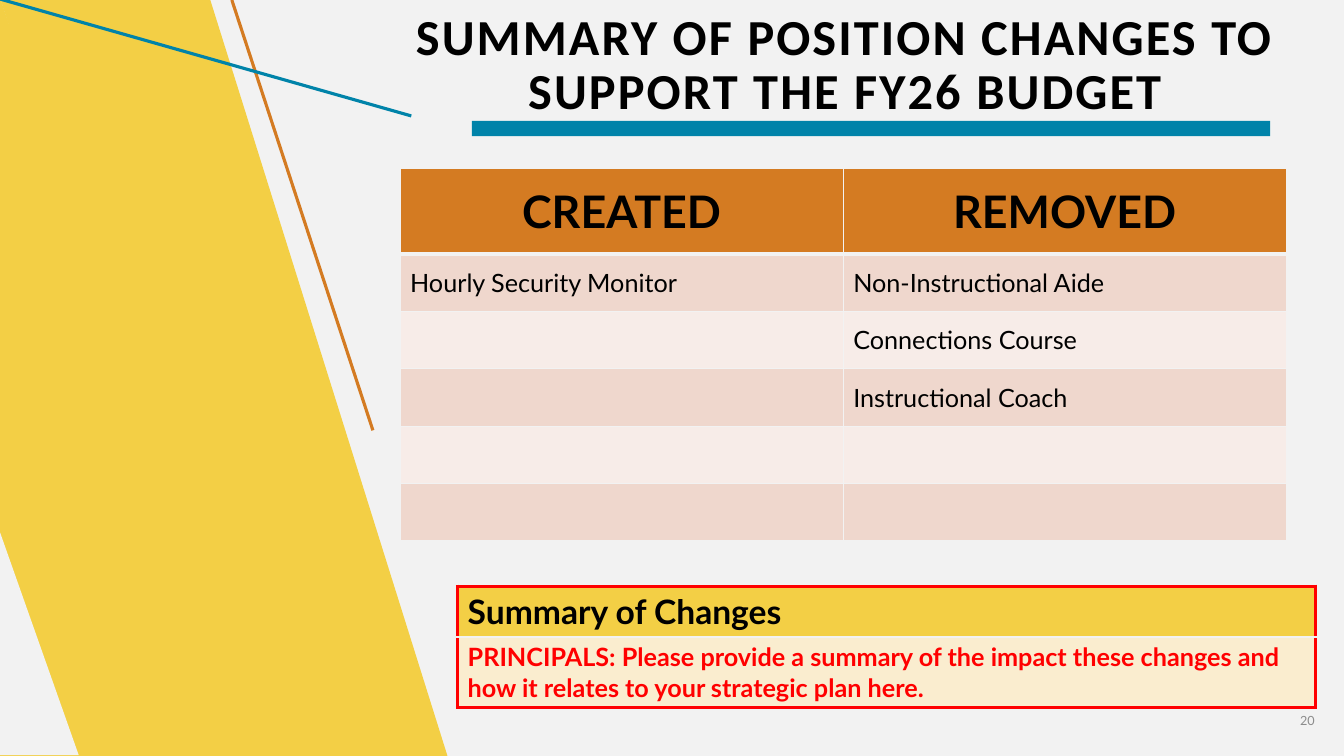
from dataclasses import dataclass

from lxml import etree
from pptx import Presentation
from pptx.dml.color import RGBColor
from pptx.enum.shapes import MSO_CONNECTOR, MSO_SHAPE
from pptx.enum.text import MSO_ANCHOR, PP_ALIGN
from pptx.oxml.ns import qn
from pptx.util import Pt

BLACK = RGBColor(0x00, 0x00, 0x00)
RED = RGBColor(0xFF, 0x00, 0x00)
GRAY = RGBColor(0x8C, 0x8C, 0x8C)
PALE = RGBColor(0xF2, 0xF2, 0xF2)
YELLOW = RGBColor(0xF3, 0xCF, 0x45)
CREAM = RGBColor(0xFA, 0xED, 0xCF)
ORANGE = RGBColor(0xD4, 0x7B, 0x22)
TEAL = RGBColor(0x00, 0x83, 0xA9)
ROSE = RGBColor(0xEF, 0xD7, 0xCD)
BLUSH = RGBColor(0xF7, 0xEC, 0xE8)

LEFT, CENTER, RIGHT = PP_ALIGN.LEFT, PP_ALIGN.CENTER, PP_ALIGN.RIGHT
TOP, MIDDLE = MSO_ANCHOR.TOP, MSO_ANCHOR.MIDDLE
STRAIGHT = MSO_CONNECTOR.STRAIGHT
RECT = MSO_SHAPE.RECTANGLE
SLANT = MSO_SHAPE.PARALLELOGRAM
WEDGE = MSO_SHAPE.RIGHT_TRIANGLE

Box = tuple[float, float, float, float]


@dataclass
class Style:
    size: float
    color: RGBColor = BLACK
    bold: bool = False
    font: str = "Lato"
    align: PP_ALIGN = LEFT
    anchor: MSO_ANCHOR = MIDDLE


@dataclass
class Block:
    kind: MSO_SHAPE
    box: Box
    fill: RGBColor


@dataclass
class Line:
    start: tuple[float, float]
    end: tuple[float, float]
    color: RGBColor


@dataclass
class Row:
    height: float
    texts: list[str]
    style: Style
    fill: RGBColor


@dataclass
class Edge:
    color: RGBColor
    width: float


HEAD = Style(32, bold=True, align=CENTER)
BODY = Style(18)
TITLE = Style(36, bold=True, font="Calibri", align=CENTER)
NUMBER = Style(9, GRAY, align=RIGHT)
LABEL = Style(24, bold=True, anchor=TOP)
PROMPT = Style(18, RED, bold=True, anchor=TOP)

THIN, THICK, FRAME = Edge(PALE, 1), Edge(PALE, 3), Edge(RED, 3)

BAND = Block(SLANT, (0, -2, 319.7, 542), YELLOW)
WEDGES = [
    Block(WEDGE, (0, -2, 176.4, 542), YELLOW),
    Block(WEDGE, (0, 380.2, 56.2, 159.1), PALE),
]
BAR = Block(RECT, (337, 86.4, 570.2, 10.8), TEAL)
STRIPE = Line((266.4, 307.4), (165.6, 0), ORANGE)
SLOPE = Line((293.8, 82.8), (0, -0.7), TEAL)

POSTS = [
    ["Hourly Security Monitor", "Non-Instructional Aide"],
    ["", "Connections Course"],
    ["", "Instructional Coach"],
    ["", ""],
    ["", ""],
]
CHANGES = [Row(61.2, ["CREATED", "REMOVED"], HEAD, ORANGE)] + [
    Row(41, texts, BODY, (ROSE, BLUSH)[i % 2]) for i, texts in enumerate(POSTS)
]
SUMMARY = [
    Row(36, ["Summary of Changes"], LABEL, YELLOW),
    Row(50.4, ["PRINCIPALS: Please provide a summary of the impact these changes "
               "and how it relates to your strategic plan here."], PROMPT, CREAM),
]


def write(frame, text: str, style: Style):
    """Fill the first paragraph with one styled run and return both."""
    para = frame.paragraphs[0]
    para.alignment = style.align
    run = para.add_run()
    run.text = text
    run.font.name = style.font
    run.font.size = Pt(style.size)
    run.font.bold = style.bold
    run.font.color.rgb = style.color
    return para, run


def add_text(slide, box: Box, text: str, style: Style):
    frame = slide.shapes.add_textbox(*map(Pt, box)).text_frame
    frame.word_wrap = True
    frame.vertical_anchor = style.anchor
    return write(frame, text, style)


def add_block(slide, block: Block):
    shape = slide.shapes.add_shape(block.kind, *map(Pt, block.box))
    shape.shadow.inherit = False
    shape.fill.solid()
    shape.fill.fore_color.rgb = block.fill
    shape.line.fill.background()
    return shape


def add_line(slide, line: Line) -> None:
    link = slide.shapes.add_connector(STRAIGHT, *map(Pt, line.start + line.end))
    link.line.color.rgb = line.color
    link.line.width = Pt(2.25)
    etree.SubElement(link.element.spPr, qn("a:effectLst"))


def add_edge(cell, side: str, edge: Edge) -> None:
    props = cell._tc.get_or_add_tcPr()
    line = etree.SubElement(props, qn(f"a:ln{side}"), w=str(Pt(edge.width)))
    fill = etree.SubElement(line, qn("a:solidFill"))
    etree.SubElement(fill, qn("a:srgbClr"), val=str(edge.color))


def add_grid(slide, box: Box, rows: list[Row], outer: Edge, rule: Edge) -> None:
    """Draw a table; rule is the edge between the first row and the next."""
    count, width = len(rows), len(rows[0].texts)
    grid = slide.shapes.add_table(count, width, *map(Pt, box)).table
    for r, row in enumerate(rows):
        grid.rows[r].height = Pt(row.height)
        above = {0: outer, 1: rule}.get(r, THIN)
        below = outer if r == count - 1 else rule if r == 0 else THIN
        for c, text in enumerate(row.texts):
            cell = grid.cell(r, c)
            cell.vertical_anchor = row.style.anchor
            add_edge(cell, "L", outer if c == 0 else THIN)
            add_edge(cell, "R", outer if c == width - 1 else THIN)
            add_edge(cell, "T", above)
            add_edge(cell, "B", below)
            cell.fill.solid()
            cell.fill.fore_color.rgb = row.fill
            if text:
                write(cell.text_frame, text, row.style)


def main() -> None:
    deck = Presentation()
    deck.slide_width, deck.slide_height = Pt(960), Pt(540)
    slide = deck.slides.add_slide(deck.slide_layouts[6])
    slide.background.fill.solid()
    slide.background.fill.fore_color.rgb = PALE

    add_line(slide, STRIPE)
    band = add_block(slide, BAND)
    band.adjustments[0] = 0.532
    band.element.spPr.xfrm.set("flipH", "1")
    for wedge in WEDGES:
        add_block(slide, wedge)
    add_line(slide, SLOPE)

    para, run = add_text(slide, (258.5, 6.5, 690.5, 81.4),
                         "SUMMARY OF POSITION CHANGES TO SUPPORT THE FY26 BUDGET", TITLE)
    para.line_spacing = 0.9
    run.font._element.set("spc", "150")
    add_text(slide, (868.3, 500.4, 77.8, 28.8), "20", NUMBER)
    add_block(slide, BAR)

    add_grid(slide, (285.8, 120.2, 633, 266.2), CHANGES, THIN, THICK)
    add_grid(slide, (326.9, 419, 612.7, 86.4), SUMMARY, FRAME, THIN)
    deck.save("out.pptx")


if __name__ == "__main__":
    main()
